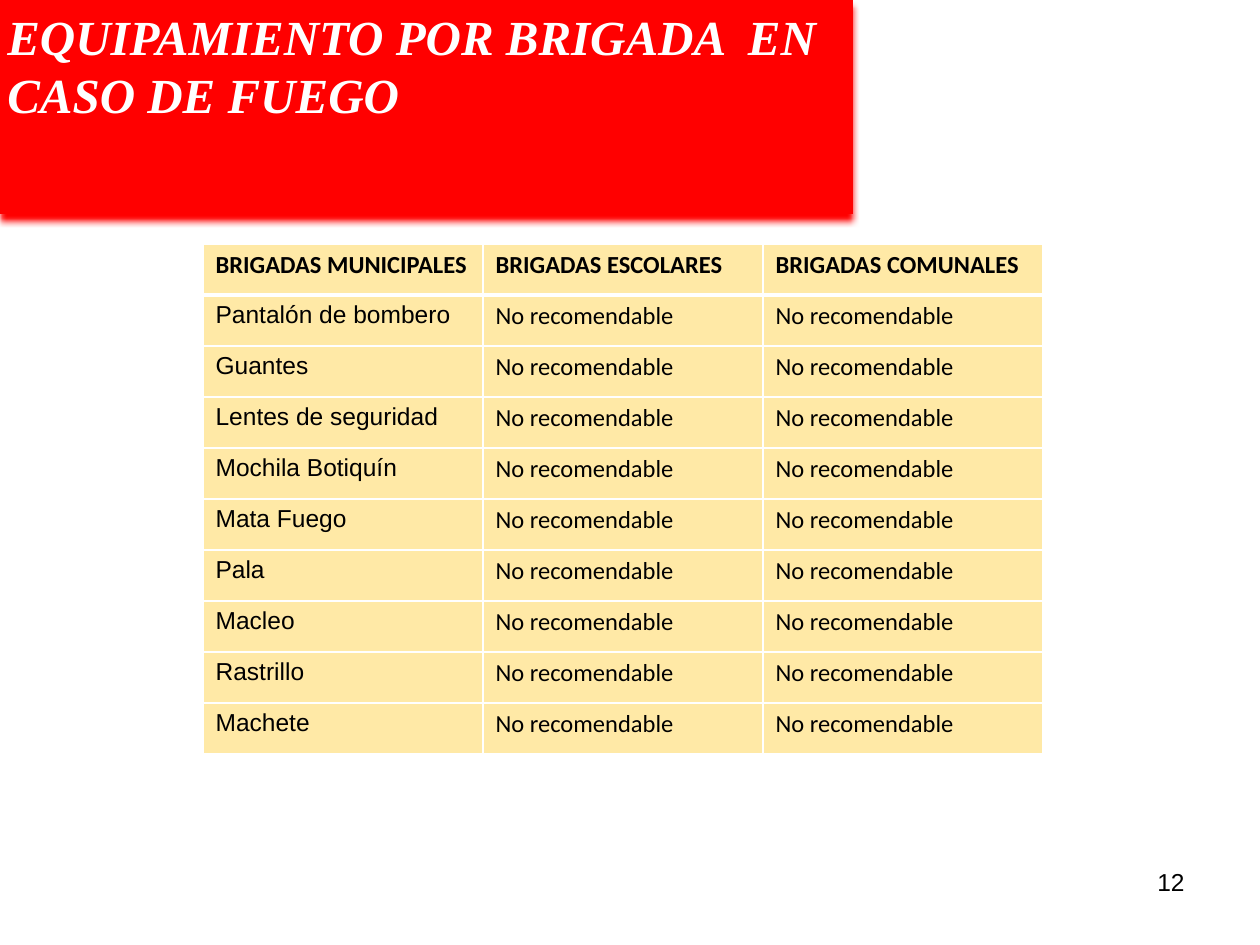
from lxml import etree
from pptx import Presentation
from pptx.dml.color import RGBColor
from pptx.enum.shapes import MSO_SHAPE
from pptx.enum.text import MSO_ANCHOR, PP_ALIGN
from pptx.oxml.ns import qn
from pptx.util import Emu, Pt

ROUND = MSO_SHAPE.ROUNDED_RECTANGLE
TOP = MSO_ANCHOR.TOP
LEFT, RIGHT = PP_ALIGN.LEFT, PP_ALIGN.RIGHT
SCALE = 914400 / 126
POINT = 12700
RED, GOLD, WHITE, BLACK = "FF0000", "FFC000", "FFFFFF", "000000"
HEADS = ["BRIGADAS MUNICIPALES", "BRIGADAS ESCOLARES", "BRIGADAS COMUNALES"]
GEAR = ["Pantalón de bombero", "Guantes", "Lentes de seguridad",
        "Mochila Botiquín", "Mata Fuego", "Pala", "Macleo", "Rastrillo",
        "Machete"]
ADVICE = "No recomendable"


def px(size):
    return Emu(round(size * SCALE))


def color(code):
    return RGBColor.from_string(code)


def add_node(host, tag, **attrs):
    return etree.SubElement(host, qn(tag), **attrs)


def add_run(para, text, size, face, code, bold=False, italic=False):
    run = para.add_run()
    run.text = text
    font = run.font
    font.size, font.name = Pt(size), face
    font.bold, font.italic = bold, italic
    font.color.rgb = color(code)


def add_text(slide, box, text, size, face, code, align=LEFT, **style):
    frame = slide.shapes.add_textbox(*map(px, box)).text_frame
    frame.word_wrap = True
    frame.vertical_anchor = TOP
    para = frame.paragraphs[0]
    para.alignment = align
    add_run(para, text, size, face, code, **style)


def add_glow(shape):
    effects = add_node(shape.element.spPr, "a:effectLst")
    shade = add_node(effects, "a:outerShdw", blurRad=str(4 * POINT),
                     dist=str(4 * POINT), dir="5400000", rotWithShape="0")
    add_node(shade, "a:srgbClr", val=RED)


def add_banner(slide, box):
    left, top, width, height = box
    panel = slide.shapes.add_shape(ROUND, *map(px, box))
    panel.adjustments[0] = 0
    panel.fill.solid()
    panel.fill.fore_color.rgb = color(RED)
    panel.line.fill.background()
    add_glow(panel)
    add_text(slide, (left - 5, top, width + 28, height),
             "EQUIPAMIENTO POR BRIGADA  EN CASO DE FUEGO",
             28, "Times New Roman", WHITE, bold=True, italic=True)


def paint_cell(cell, widths):
    cell.fill.solid()
    cell.fill.fore_color.rgb = color(GOLD)
    props = cell._tc.get_or_add_tcPr()
    add_node(props.find(".//" + qn("a:srgbClr")), "a:alpha", val="35000")
    for spot, (side, width) in enumerate(widths.items()):
        line = etree.Element(qn("a:ln" + side), w=str(width * POINT))
        fill = add_node(line, "a:solidFill")
        add_node(fill, "a:srgbClr", val=WHITE)
        props.insert(spot, line)


def add_grid(slide, box):
    rows = [HEADS] + [[item, ADVICE, ADVICE] for item in GEAR]
    shape = slide.shapes.add_table(len(rows), len(HEADS), *map(px, box))
    table = shape.table
    table.horz_banding = False
    for col in table.columns:
        col.width = px(box[2] // len(HEADS))
    for row, texts in enumerate(rows):
        table.rows[row].height = px(box[3] // len(rows))
        head = row == 0
        widths = {"L": 1, "R": 1, "T": 3 if row == 1 else 1,
                  "B": 3 if head else 1}
        for col, text in enumerate(texts):
            cell = table.cell(row, col)
            face = "Calibri" if head or col else "Arial"
            add_run(cell.text_frame.paragraphs[0], text, 14, face, BLACK,
                    bold=head)
            paint_cell(cell, widths)


def add_number(slide, box):
    add_text(slide, box, "12", 14, "Arial", BLACK, RIGHT)


def main():
    deck = Presentation()
    deck.slide_width, deck.slide_height = px(1260), px(945)
    slide = deck.slides.add_slide(deck.slide_layouts[6])
    add_banner(slide, (0, 0, 853, 214))
    add_number(slide, (903, 861, 294, 65))
    add_grid(slide, (203, 244, 840, 510))
    deck.save("out.pptx")


if __name__ == "__main__":
    main()
